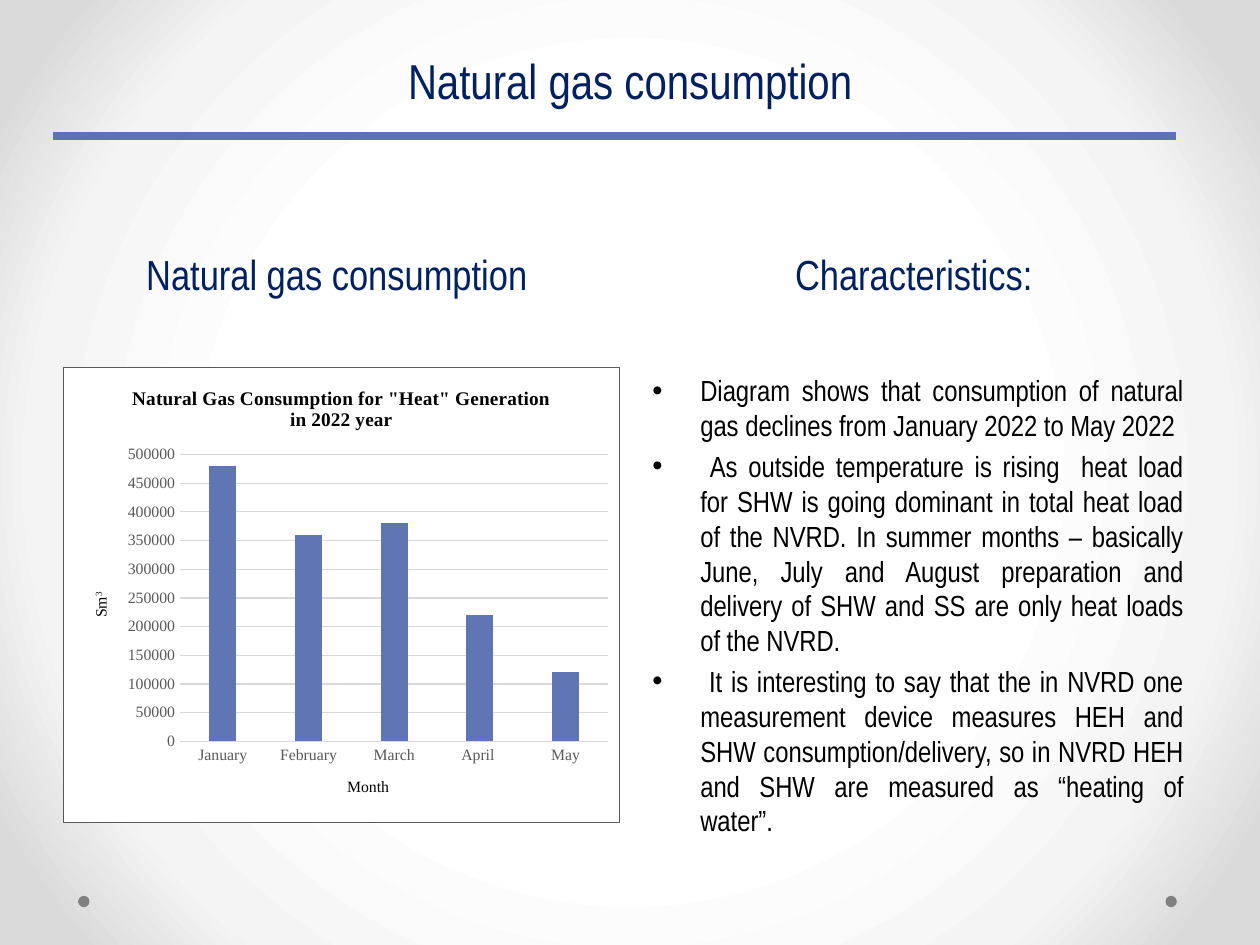
import dataclasses

import lxml.etree
import pptx
import pptx.chart.data
import pptx.dml.color
import pptx.enum.chart
import pptx.enum.shapes
import pptx.enum.text
import pptx.oxml
import pptx.oxml.ns
import pptx.util

ALIGN = pptx.enum.text.PP_ALIGN
ANCHOR = pptx.enum.text.MSO_ANCHOR
NS = pptx.oxml.ns.nsdecls("a", "c")
WIDTH, HEIGHT = 10, 7.5
MARGIN, COLUMN, GUTTER = 0.5, 4.42, 0.16
COLUMNS = [MARGIN + i * (COLUMN + GUTTER) for i in range(2)]
HEADING_ROW = (1.75, 0.67)
BODY_ROW = (2.91, 3.62)


@dataclasses.dataclass(frozen=True)
class Theme:
    font: str = "Arial Narrow"
    chart_font: str = "Times New Roman"
    navy: str = "002060"
    black: str = "000000"
    rule: str = "5C72B2"
    bar: str = "6076B4"
    dot: str = "808080"
    tick: str = "595959"
    grid: str = "D9D9D9"
    backdrop: tuple = ((50, "FFFFFF"), (76, "F4F4F4"), (92, "DADADA"))
    title: float = 28
    heading: float = 24
    body: float = 16.6
    chart_title: float = 11
    axis: float = 9


THEME = Theme()

BULLETS = [
    "Diagram shows that consumption of natural gas declines from January 2022 to May 2022",
    " As outside temperature is rising  heat load for SHW is going dominant in total heat load "
    "of the NVRD. In summer months – basically June, July and August preparation and delivery "
    "of SHW and SS are only heat loads of the NVRD.",
    " It is interesting to say that the in NVRD one measurement device measures HEH and SHW "
    "consumption/delivery, so in NVRD HEH and SHW are measured as “heating of water”. ",
]
CONSUMPTION = {"January": 480000, "February": 360000, "March": 380000, "April ": 220000, "May": 120000}


def rgb(color):
    return pptx.dml.color.RGBColor.from_string(color)


def inches(*lengths):
    return [pptx.util.Inches(n) for n in lengths]


def style_font(font, name, size, color, bold=False):
    font.name, font.size, font.bold = name, pptx.util.Pt(size), bold
    font.color.rgb = rgb(color)


def style_line(line, color, width):
    line.color.rgb = rgb(color)
    line.width = pptx.util.Pt(width)


def set_background(slide):
    slide.background.fill.gradient()
    grad = slide.background._cSld.bg.bgPr.find(pptx.oxml.ns.qn("a:gradFill"))
    stops = "".join(
        f'<a:gs pos="{pos * 1000}"><a:srgbClr val="{color}"/></a:gs>' for pos, color in THEME.backdrop
    )
    radial = pptx.oxml.parse_xml(
        f'<a:gradFill {NS} rotWithShape="1"><a:gsLst>{stops}</a:gsLst><a:path path="circle">'
        '<a:fillToRect l="50000" t="50000" r="50000" b="50000"/></a:path></a:gradFill>'
    )
    grad.getparent().replace(grad, radial)


def add_text(slide, box, texts, size, color, align, anchor):
    tf = slide.shapes.add_textbox(*inches(*box)).text_frame
    tf.word_wrap, tf.vertical_anchor = True, anchor
    for i, text in enumerate(texts):
        p = tf.paragraphs[0] if i == 0 else tf.add_paragraph()
        p.text, p.alignment = text, align
        p.space_before = pptx.util.Pt(round(size * 0.2, 1))
        style_font(p.font, THEME.font, size, color)
    return tf


def add_heading(slide, box, text, size=THEME.heading):
    return add_text(slide, box, [text], size, THEME.navy, ALIGN.CENTER, ANCHOR.BOTTOM)


def add_bullets(slide, box, texts):
    tf = add_text(slide, box, texts, THEME.body, THEME.black, ALIGN.JUSTIFY, ANCHOR.TOP)
    tf.margin_right = pptx.util.Inches(0.11)
    indent = pptx.util.Inches(0.38)
    for p in tf.paragraphs:
        pPr = p._p.get_or_add_pPr()
        pPr.set("marL", str(indent))
        pPr.set("indent", str(-indent))
        for bullet in (f'<a:buFont {NS} typeface="Arial"/>', f'<a:buChar {NS} char="•"/>'):
            pPr.insert_element_before(pptx.oxml.parse_xml(bullet), "a:defRPr")


def add_dot(slide, left, top, size=0.09):
    sp = slide.shapes.add_shape(
        pptx.enum.shapes.MSO_SHAPE.OVAL, *inches(left, top, size, size)
    )
    sp.shadow.inherit = False
    sp.fill.solid()
    sp.fill.fore_color.rgb = rgb(THEME.dot)
    sp.line.fill.background()


def add_rule(slide, left, right, y):
    line = slide.shapes.add_connector(
        pptx.enum.shapes.MSO_CONNECTOR.STRAIGHT, *inches(left, y, right, y)
    )
    style_line(line.line, THEME.rule, 4.5)
    lxml.etree.SubElement(line._element.spPr, pptx.oxml.ns.qn("a:effectLst"))


def set_title(owner, text, size, bold=False, superscript=""):
    p = owner.text_frame.paragraphs[0]
    p.text = text
    style_font(p.font, THEME.chart_font, size, THEME.black, bold)
    if superscript:
        r = p.add_run()
        r.text = superscript
        r.font._element.set("baseline", "30000")


def style_axis(axis, title, superscript=""):
    set_title(axis.axis_title, title, THEME.axis, superscript=superscript)
    axis.major_tick_mark = pptx.enum.chart.XL_TICK_MARK.NONE
    style_font(axis.tick_labels.font, THEME.chart_font, THEME.axis, THEME.tick)


def frame_chart(chart):
    chart._chartSpace.chart.addnext(pptx.oxml.parse_xml(
        f'<c:spPr {NS}><a:solidFill><a:srgbClr val="FFFFFF"/></a:solidFill><a:ln w="6350">'
        f'<a:solidFill><a:srgbClr val="{THEME.tick}"/></a:solidFill></a:ln></c:spPr>'
    ))


def add_column_chart(slide, box, values):
    data = pptx.chart.data.CategoryChartData()
    data.categories = list(values)
    data.add_series("Series 1", list(values.values()))
    chart = slide.shapes.add_chart(
        pptx.enum.chart.XL_CHART_TYPE.COLUMN_CLUSTERED, *inches(*box), data
    ).chart
    style_font(chart.font, THEME.chart_font, 10, THEME.black)
    frame_chart(chart)
    chart.has_legend = False
    set_title(chart.chart_title, 'Natural Gas Consumption for "Heat" Generation in 2022 year',
              THEME.chart_title, bold=True)
    months, amounts = chart.category_axis, chart.value_axis
    style_axis(months, "Month")
    style_axis(amounts, "Sm", superscript="3")
    style_line(months.format.line, THEME.grid, 0.75)
    amounts.format.line.fill.background()
    style_line(amounts.major_gridlines.format.line, THEME.grid, 0.75)
    amounts.minimum_scale, amounts.maximum_scale, amounts.major_unit = 0, 500000, 50000
    plot = chart.plots[0]
    plot.gap_width, plot.overlap, plot.vary_by_categories = 219, -27, False
    fill = plot.series[0].format.fill
    fill.solid()
    fill.fore_color.rgb = rgb(THEME.bar)


def main():
    prs = pptx.Presentation()
    prs.slide_width, prs.slide_height = inches(WIDTH, HEIGHT)
    slide = prs.slides.add_slide(prs.slide_layouts[6])
    set_background(slide)
    for left in (0.62, 9.25):
        add_dot(slide, left, 7.11)
    title = add_heading(slide, (MARGIN, 0, WIDTH - 2 * MARGIN, 0.92),
                        "Natural gas consumption", THEME.title)
    title.paragraphs[0].line_spacing = pptx.util.Pt(58)
    title.paragraphs[0].space_before = pptx.util.Pt(0)
    for left, text in zip(COLUMNS, ("Natural gas consumption ", "Characteristics: ")):
        add_heading(slide, (left, HEADING_ROW[0], COLUMN, HEADING_ROW[1]), text)
    chart_box, bullet_box = [(left, BODY_ROW[0], COLUMN, BODY_ROW[1]) for left in COLUMNS]
    add_bullets(slide, bullet_box, BULLETS)
    add_column_chart(slide, chart_box, CONSUMPTION)
    add_rule(slide, 0.42, 9.33, 1.08)
    prs.save("out.pptx")


if __name__ == "__main__":
    main()
